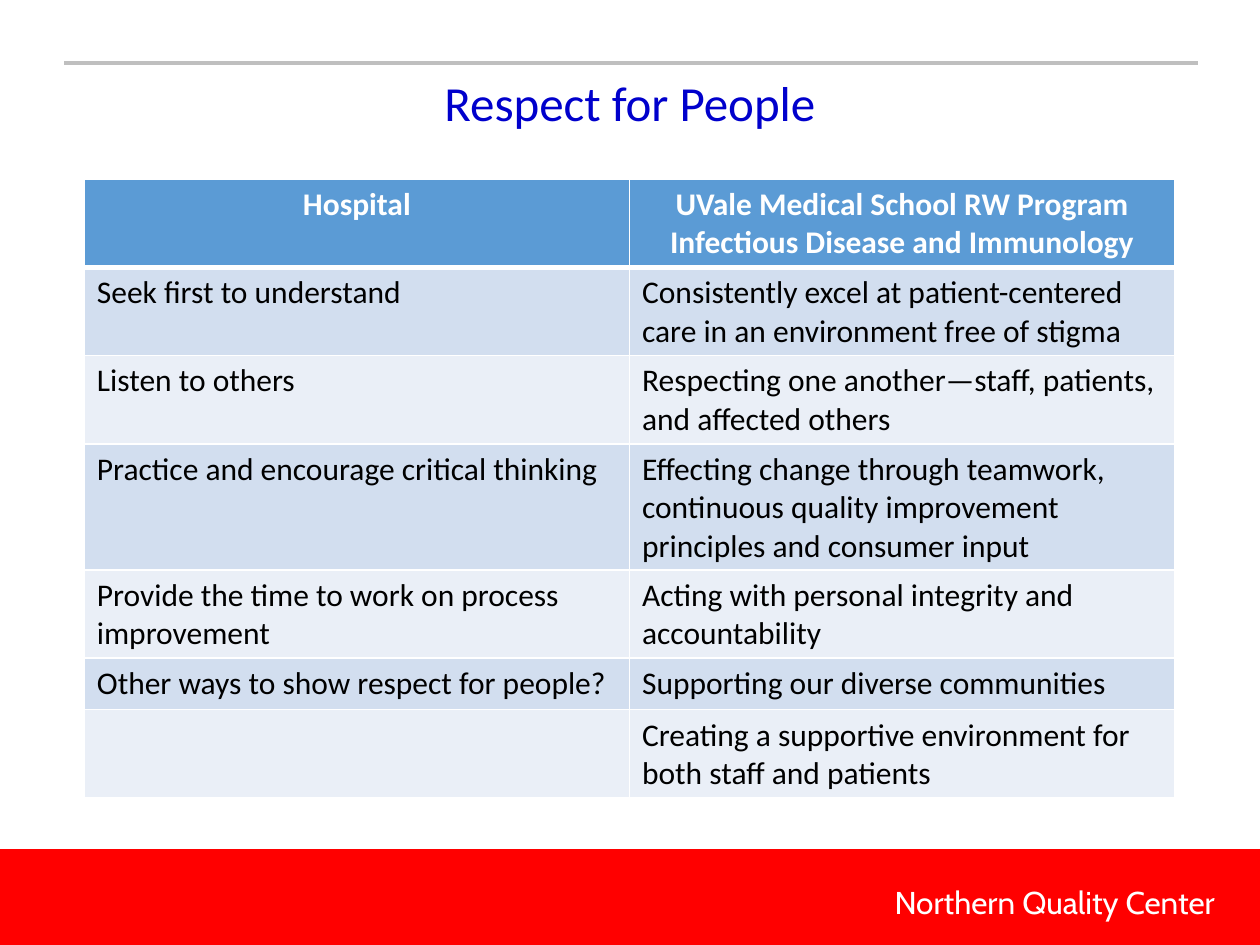
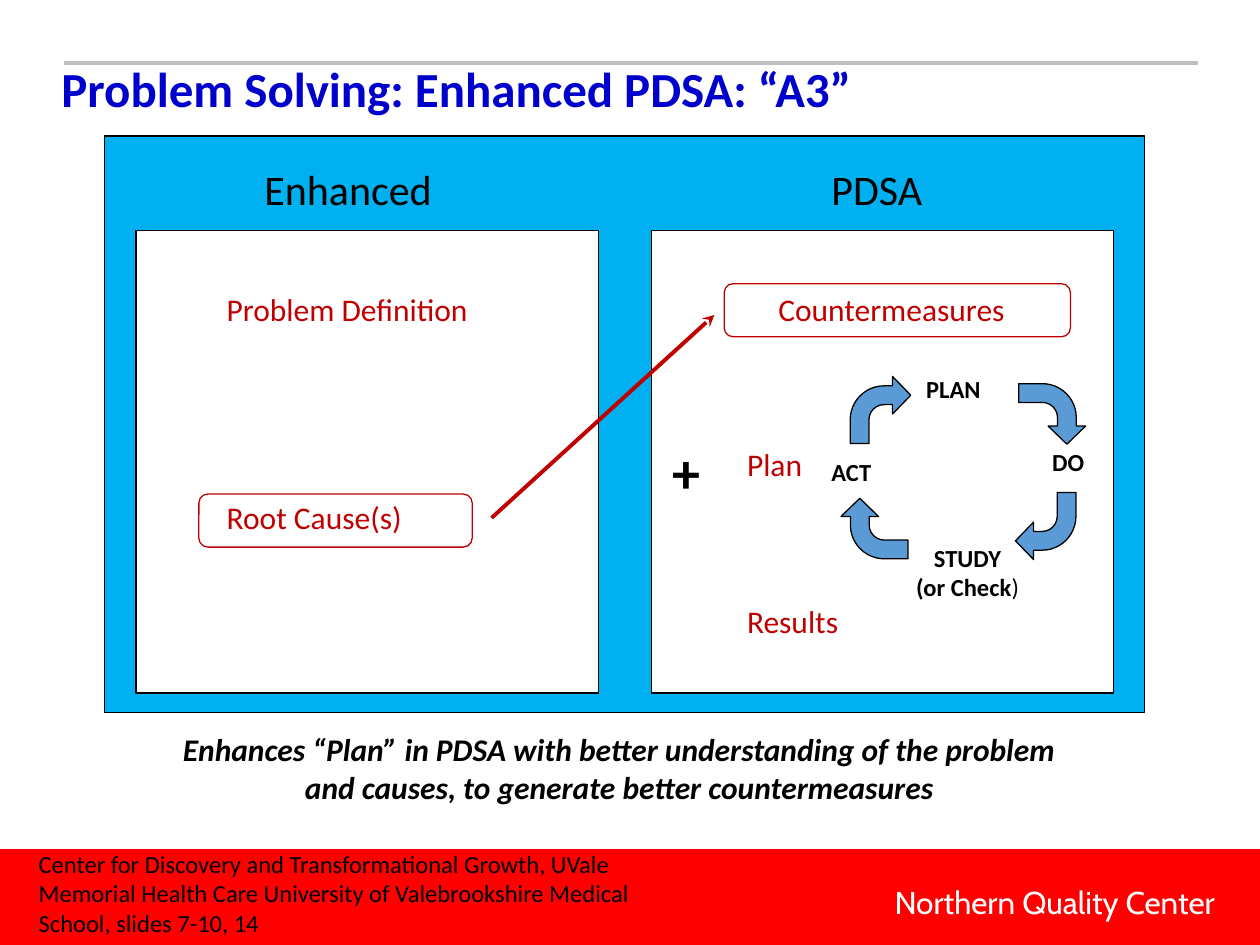
from lxml.etree import SubElement
from pptx import Presentation
from pptx.dml.color import RGBColor
from pptx.enum.shapes import MSO_CONNECTOR, MSO_SHAPE
from pptx.enum.text import MSO_ANCHOR, PP_ALIGN
from pptx.oxml.ns import qn
from pptx.util import Cm, Pt

RED, GRAY, WHITE, BLACK = "FF0000", "BFBFBF", "FFFFFF", "000000"
TITLE_BLUE, SKY, STEEL, CRIMSON = "0000CC", "00B0F0", "5B9BD5", "C00000"
ROW_FILLS = ("D2DEEF", "EAEFF7")

TITLE = {"size": 28, "color": TITLE_BLUE}
BRAND = {"size": 18, "name": "Cabin", "color": WHITE}
HEADER = {"size": 18, "color": WHITE, "bold": True}
BODY = {"size": 18, "color": BLACK, "bold": False}
STEP = {"size": 18, "color": CRIMSON}
HEADING = {"size": 24, "color": BLACK}
PLUS = {"size": 32, "color": BLACK, "bold": True}
CYCLE = {"size": 14, "color": BLACK, "bold": True}
CAPTION = {"size": 18, "color": BLACK, "bold": True, "italic": True}
SOURCE = {"size": 14, "color": BLACK}

SLIDE_SIZE = (25.4, 19.05)
BAND = (0, 17.12, 25.4, 1.93)
RULE = (1.3, 1.27, 24.16, 1.27)
BRAND_NAME = "Northern Quality Center"

RESPECT_TITLE = "Respect for People"
RESPECT_ROWS = [
    (["Hospital"], ["UVale Medical School RW Program", "Infectious Disease and Immunology"]),
    (["Seek first to understand"],
     ["Consistently excel at patient-centered care in an environment free of stigma"]),
    (["Listen to others"], ["Respecting one another—staff, patients, and affected others"]),
    (["Practice and encourage critical thinking"],
     ["Effecting change through teamwork, continuous quality improvement principles and consumer input"]),
    (["Provide the time to work on process improvement"],
     ["Acting with personal integrity and accountability"]),
    (["Other ways to show respect for people?"], ["Supporting our diverse communities"]),
    ([], ["Creating a supportive environment for both staff and patients"]),
]
TABLE_LEFT, TABLE_TOP, COLUMN_WIDTH, ROW_HEIGHT = 1.7, 3.61, 10.99, 1.04

PDSA_TITLE = "Problem Solving: Enhanced PDSA: “A3”"
FRAME = (2.11, 2.74, 20.96, 11.63)
PANEL_LEFTS, PANEL_TOP, PANEL_SIDE = (2.74, 13.13), 4.65, 9.32
HIGHLIGHTS = [(4.01, 9.96, 5.51, 1.07), (14.6, 5.72, 6.98, 1.07)]
CAUSE_TO_COUNTERMEASURE = (9.91, 10.44, 14.4, 6.35)
LABELS = [
    ("Enhanced", (5.08, 3.18, 4.67, 1.3), HEADING),
    ("PDSA", (16.51, 3.18, 2.84, 1.3), HEADING),
    ("Problem Definition", (4.32, 5.72, 7.11, 1.12), STEP),
    ("Root Cause(s)", (4.32, 9.91, 5.56, 1.12), STEP),
    ("Countermeasures", (15.44, 5.72, 5.61, 1.02), STEP),
    ("Plan", (14.81, 8.84, 2.01, 1.12), STEP),
    ("Results", (14.81, 12.01, 3.07, 1.12), STEP),
    ("+", (13.31, 8.69, 1.5, 1.63), PLUS),
    ("PLAN", (18.42, 7.42, 2.01, 0.86), CYCLE),
    ("DO", (20.96, 8.89, 1.35, 0.86), CYCLE),
    ("ACT", (16.51, 9.09, 1.6, 0.86), CYCLE),
]
STUDY_PLACE = (17.78, 10.82, 3.45, 1.45)
CYCLE_ARROWS = [(17.14, 7.59), (20.6, 7.67), (20.47, 9.93), (17.02, 9.98)]
ARROW_SIZE = (1.22, 1.35)
ARROW_ADJUSTMENTS = (0.31, 0.31, 0.3, 0.56)
CAPTION_LINES = [
    "Enhances “Plan” in PDSA with better understanding of the problem",
    "and causes, to generate better countermeasures",
]
SOURCE_NOTE = ("Center for Discovery and Transformational Growth, UVale Memorial Health Care "
               "University of Valebrookshire Medical School, slides 7-10, 14")


def rgb(color):
    return RGBColor.from_string(color)


def lengths(place):
    return [Cm(value) for value in place]


def add_run(paragraph, text, style):
    run = paragraph.add_run()
    run.text = text
    for attribute, value in {"name": "Calibri", **style}.items():
        if attribute == "color":
            run.font.color.rgb = rgb(value)
        else:
            setattr(run.font, attribute, Pt(value) if attribute == "size" else value)


def write_lines(frame, lines, style, align=PP_ALIGN.LEFT):
    for index, line in enumerate(lines):
        paragraph = frame.paragraphs[0] if index == 0 else frame.add_paragraph()
        paragraph.alignment = align
        add_run(paragraph, line, style)


def add_text(slide, lines, place, style, align=PP_ALIGN.LEFT, **frame_format):
    frame = slide.shapes.add_textbox(*lengths(place)).text_frame
    for attribute, value in {"word_wrap": True, **frame_format}.items():
        setattr(frame, attribute, value)
    write_lines(frame, lines, style, align)
    return frame


def add_figure(slide, kind, place, fill=None, line=None, adjustments=()):
    figure = slide.shapes.add_shape(kind, *lengths(place))
    figure.shadow.inherit = False
    if fill:
        figure.fill.solid()
        figure.fill.fore_color.rgb = rgb(fill)
    else:
        figure.fill.background()
    if line:
        figure.line.color.rgb = rgb(line)
        figure.line.width = Pt(0.75)
    else:
        figure.line.fill.background()
    for index, value in enumerate(adjustments):
        figure.adjustments[index] = value
    return figure


def add_line(slide, ends, color, width, arrowhead=None):
    connector = slide.shapes.add_connector(MSO_CONNECTOR.STRAIGHT, *lengths(ends))
    connector.line.color.rgb = rgb(color)
    connector.line.width = Pt(width)
    if arrowhead:
        SubElement(connector.line._get_or_add_ln(), qn("a:tailEnd"), type=arrowhead)
    SubElement(connector._element.spPr, qn("a:effectLst"))


def add_base(presentation):
    slide = presentation.slides.add_slide(presentation.slide_layouts[6])
    add_figure(slide, MSO_SHAPE.RECTANGLE, BAND, RED)
    add_line(slide, RULE, GRAY, 2)
    add_text(slide, [BRAND_NAME], (16.08, 17.68, 8.66, 1.02), BRAND, PP_ALIGN.RIGHT)
    return slide


def format_cell(cell, fill, bottom_width):
    properties = cell._tc.get_or_add_tcPr()
    for side, width in {"lnL": 1, "lnR": 1, "lnT": 1, "lnB": bottom_width}.items():
        border = SubElement(properties, qn(f"a:{side}"), w=str(Pt(width)))
        SubElement(SubElement(border, qn("a:solidFill")), qn("a:srgbClr"), val=WHITE)
    cell.fill.solid()
    cell.fill.fore_color.rgb = rgb(fill)


def build_respect(presentation):
    slide = add_base(presentation)
    title = add_text(slide, [RESPECT_TITLE], (1.27, 1.17, 22.86, 1.9), TITLE,
                     PP_ALIGN.CENTER, vertical_anchor=MSO_ANCHOR.MIDDLE)
    title.paragraphs[0].line_spacing = 0.9
    row_count, column_count = len(RESPECT_ROWS), len(RESPECT_ROWS[0])
    place = (TABLE_LEFT, TABLE_TOP, COLUMN_WIDTH * column_count, ROW_HEIGHT * row_count)
    table = slide.shapes.add_table(row_count, column_count, *lengths(place)).table
    for row_index, row in enumerate(RESPECT_ROWS):
        is_header = row_index == 0
        fill = STEEL if is_header else ROW_FILLS[(row_index - 1) % 2]
        style, align = (HEADER, PP_ALIGN.CENTER) if is_header else (BODY, PP_ALIGN.LEFT)
        for column_index, lines in enumerate(row):
            cell = table.cell(row_index, column_index)
            write_lines(cell.text_frame, lines, style, align)
            format_cell(cell, fill, 3 if is_header else 1)


def build_pdsa(presentation):
    slide = add_base(presentation)
    add_figure(slide, MSO_SHAPE.RECTANGLE, FRAME, SKY, BLACK)
    for left in PANEL_LEFTS:
        add_figure(slide, MSO_SHAPE.RECTANGLE, (left, PANEL_TOP, PANEL_SIDE, PANEL_SIDE), WHITE, BLACK)
    for text, place, style in LABELS:
        add_text(slide, [text], place, style)
    study = add_text(slide, ["STUDY", "(or Check"], STUDY_PLACE, CYCLE, PP_ALIGN.CENTER)
    add_run(study.paragraphs[-1], ")", {**CYCLE, "bold": False})
    for index, corner in enumerate(CYCLE_ARROWS):
        arrow = add_figure(slide, MSO_SHAPE.BENT_ARROW, corner + ARROW_SIZE, STEEL, BLACK, ARROW_ADJUSTMENTS)
        arrow.rotation = 90 * index
    add_line(slide, CAUSE_TO_COUNTERMEASURE, CRIMSON, 2.25, "stealth")
    for place in HIGHLIGHTS:
        add_figure(slide, MSO_SHAPE.ROUNDED_RECTANGLE, place, line=CRIMSON, adjustments=(0.17,))
    add_text(slide, CAPTION_LINES, (0, 14.6, 24.97, 1.8), CAPTION, PP_ALIGN.CENTER)
    add_text(slide, [PDSA_TITLE], (1.24, 1.19, 23.7, 1.19), {**TITLE, "bold": True},
             margin_left=0, margin_top=0, margin_right=0, margin_bottom=0)
    add_text(slide, [SOURCE_NOTE], (0.53, 16.99, 13.77, 2.06), SOURCE)


def main():
    presentation = Presentation()
    presentation.slide_width, presentation.slide_height = lengths(SLIDE_SIZE)
    build_respect(presentation)
    build_pdsa(presentation)
    presentation.save("out.pptx")


if __name__ == "__main__":
    main()
